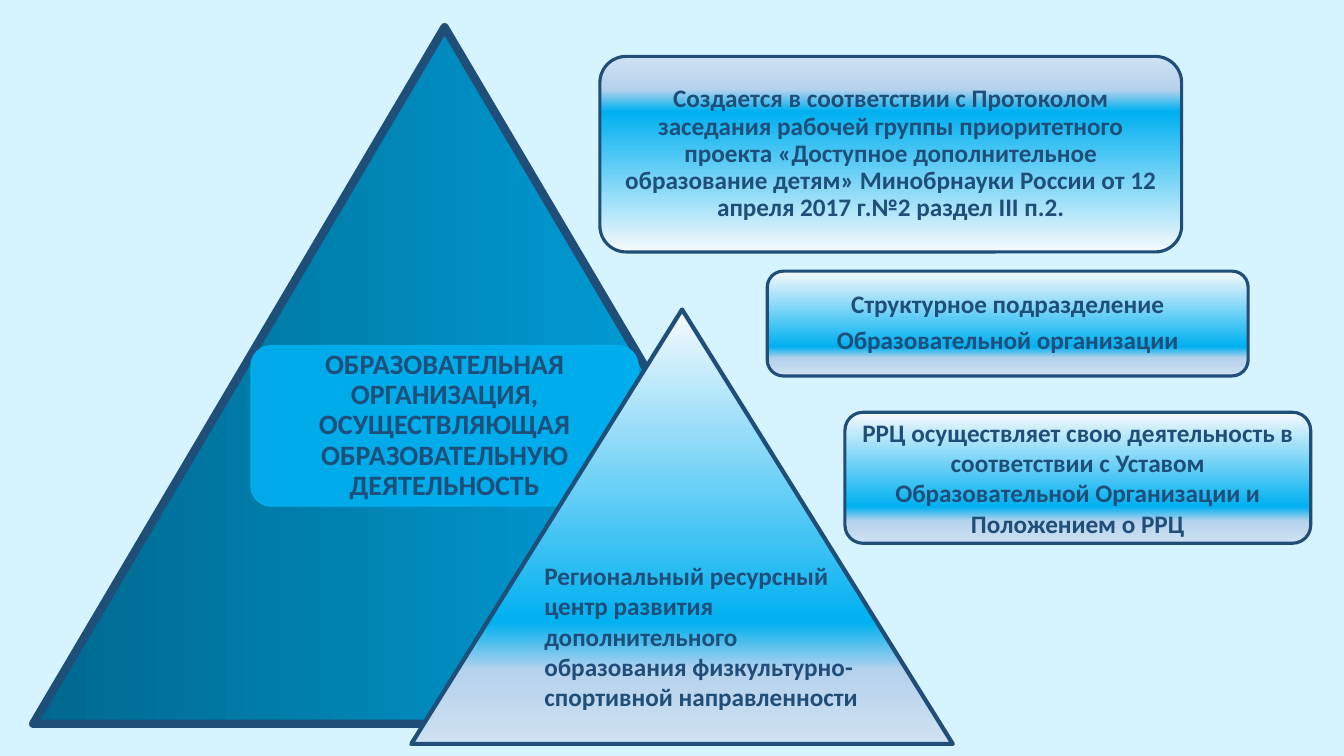
from lxml import etree
from pptx import Presentation
from pptx.dml.color import RGBColor
from pptx.enum.shapes import MSO_SHAPE
from pptx.enum.text import MSO_ANCHOR, PP_ALIGN
from pptx.oxml.ns import qn
from pptx.util import Inches, Pt

TRIANGLE = MSO_SHAPE.ISOSCELES_TRIANGLE
ROUNDED = MSO_SHAPE.ROUNDED_RECTANGLE
MIDDLE = MSO_ANCHOR.MIDDLE
CENTER, LEFT = PP_ALIGN.CENTER, PP_ALIGN.LEFT

NAVY, SKY, PALE = "1F4E79", "00B0F0", "D5F4FF"
DEEP = [(0, "00688E"), (64, "0094CA"), (100, SKY)]
GLOSS = [(0, "F7FAFD"), (72, SKY), (83, "B5D2EC"), (100, "CEE1F2")]
DOWN, UP, ACROSS = 270, 90, 0  # counter-clockwise degrees


def color(text):
    return RGBColor.from_string(text)


def shade(shape, stops, angle):
    """Fill a shape with a linear gradient of (percent, colour) stops."""
    shape.fill.gradient()
    shape.fill.gradient_angle = angle
    stop_list = shape.element.spPr.find(".//" + qn("a:gsLst"))
    for old in list(stop_list):
        stop_list.remove(old)
    for percent, tone in stops:
        stop = etree.SubElement(stop_list, qn("a:gs"), pos=str(percent * 1000))
        etree.SubElement(stop, qn("a:srgbClr"), val=tone)


def tint(shape, tone, opacity):
    shape.fill.solid()
    shape.fill.fore_color.rgb = color(tone)
    fill = shape.element.spPr.find(qn("a:solidFill"))
    etree.SubElement(fill[0], qn("a:alpha"), val=str(opacity * 1000))


def outline(slide, kind, box, tone, width):
    shape = slide.shapes.add_shape(kind, *map(Inches, box))
    shape.shadow.inherit = False
    shape.line.color.rgb = color(tone)
    shape.line.width = Pt(width)
    return shape


def triangle(slide, box, stops, angle, width):
    shape = outline(slide, TRIANGLE, box, NAVY, width)
    shade(shape, stops, angle)


def write(frame, lines, size=18, align=CENTER, spacing=None, after=0):
    frame.word_wrap = True
    for i, line in enumerate(lines):
        para = frame.paragraphs[0] if i == 0 else frame.add_paragraph()
        para.text = line
        para.alignment = align
        para.line_spacing = spacing
        para.space_after = Pt(after)
        font = para.font
        font.name, font.size, font.bold = "Calibri", Pt(size), True
        font.color.rgb = color(NAVY)


def panel(slide, box, radius, lines, pad=0.17, tone=NAVY, width=2.25, **style):
    shape = outline(slide, ROUNDED, box, tone, width)
    shape.adjustments[0] = radius / min(box[2:])
    frame = shape.text_frame
    frame.vertical_anchor = MIDDLE
    # The preset already insets its text by 0.29 of the corner radius
    inset = Inches(max(pad - 0.29 * radius, 0))
    frame.margin_left = frame.margin_right = inset
    frame.margin_top = frame.margin_bottom = inset
    write(frame, lines, **style)
    return shape


def label(slide, box, lines):
    frame = slide.shapes.add_textbox(*map(Inches, box)).text_frame
    write(frame, lines, align=LEFT)


def main():
    deck = Presentation()
    deck.slide_width, deck.slide_height = Inches(13.33), Inches(7.5)
    slide = deck.slides.add_slide(deck.slide_layouts[6])
    slide.background.fill.solid()
    slide.background.fill.fore_color.rgb = color(PALE)

    triangle(slide, (0.33, 0.27, 8.16, 6.91), DEEP, ACROSS, 6)

    unit = panel(slide, (7.61, 2.69, 4.77, 1.04), 0.16,
                 ["Структурное подразделение", "Образовательной организации"],
                 spacing=0.9, after=6.3)
    shade(unit, GLOSS, DOWN)

    school = panel(slide, (2.49, 3.43, 3.84, 1.59), 0.2,
                   ["ОБРАЗОВАТЕЛЬНАЯ ОРГАНИЗАЦИЯ, ОСУЩЕСТВЛЯЮЩАЯ "
                    "ОБРАЗОВАТЕЛЬНУЮ ДЕЯТЕЛЬНОСТЬ"],
                   pad=0.12, tone=SKY, width=1, size=20, spacing=0.9, after=7)
    tint(school, SKY, 90)

    basis = panel(slide, (5.95, 0.56, 5.77, 1.94), 0.26,
                  ["Создается в соответствии с Протоколом заседания рабочей "
                   "группы приоритетного проекта «Доступное дополнительное "
                   "образование детям» Минобрнауки России от 12 апреля 2017 "
                   "г.№2 раздел III п.2."],
                  spacing=0.9, after=6.3)
    shade(basis, GLOSS, UP)

    triangle(slide, (4.08, 3.07, 5.37, 4.31), GLOSS, DOWN, 3)
    label(slide, (5.3, 5.51, 3.38, 1.62),
          ["Региональный ресурсный",
           "центр развития дополнительного образования "
           "физкультурно-спортивной направленности"])

    charter = panel(slide, (8.38, 4.09, 4.62, 1.3), 0.18,
                    ["РРЦ осуществляет свою деятельность в соответствии с "
                     "Уставом Образовательной Организации и Положением о РРЦ"])
    shade(charter, GLOSS, DOWN)

    deck.save("out.pptx")


if __name__ == "__main__":
    main()
